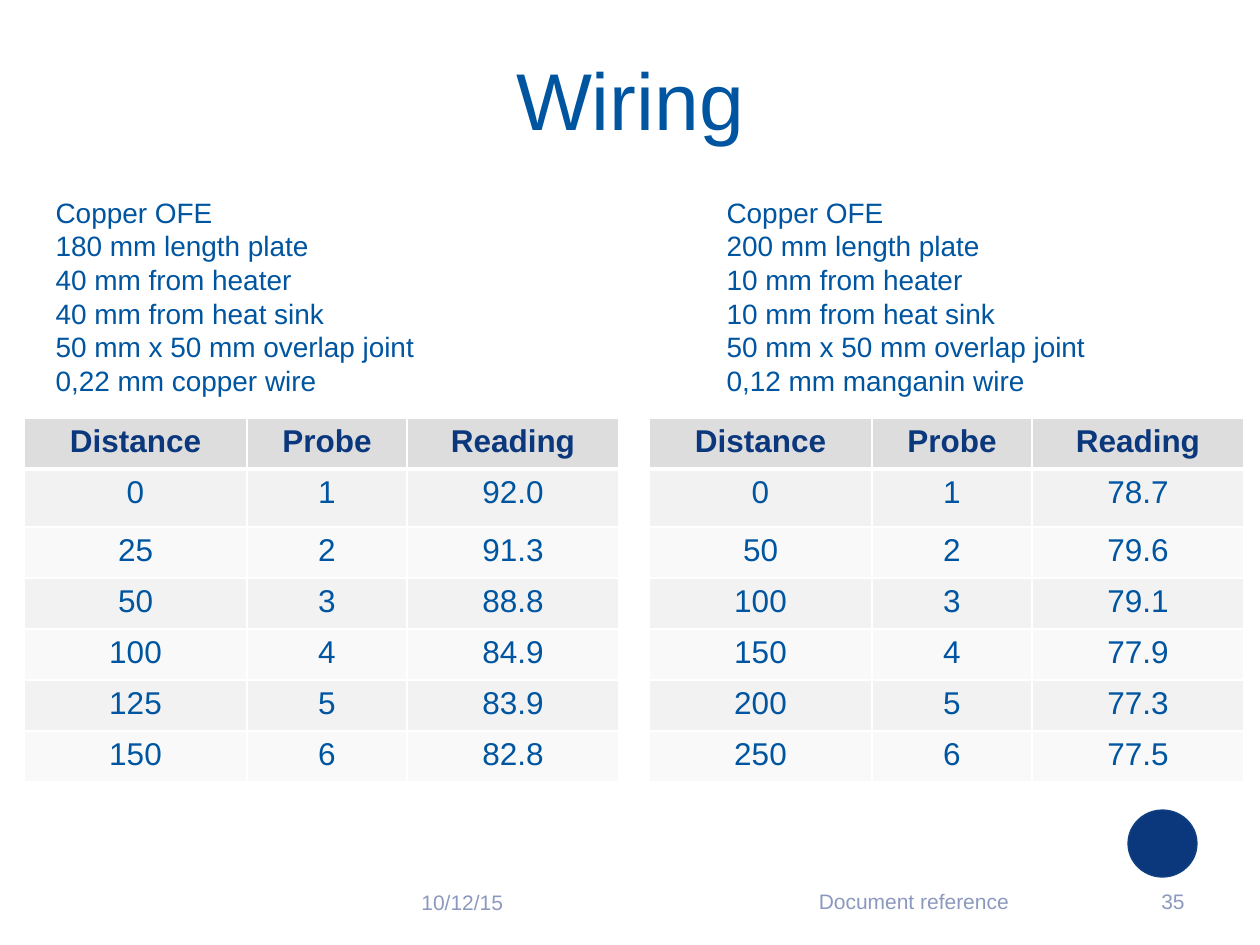
from dataclasses import dataclass

from lxml import etree
from pptx import Presentation
from pptx import util as u
from pptx.dml.color import RGBColor
from pptx.enum import shapes, text
from pptx.oxml.ns import qn

EMU_PER_PX = 914400 / 126

BLUE = RGBColor(0x00, 0x55, 0xA0)
NAVY = RGBColor(0x0B, 0x38, 0x7C)
NAVY_LINE = RGBColor(0x10, 0x42, 0x82)
MUTED = RGBColor(0x8C, 0x99, 0xBE)
HEAD_FILL = RGBColor(0xDD, 0xDD, 0xDD)
BAND_FILLS = (RGBColor(0xF2, 0xF2, 0xF2), RGBColor(0xF9, 0xF9, 0xF9))
WHITE = RGBColor(0xFF, 0xFF, 0xFF)

LEFT, CENTER, RIGHT = (text.PP_ALIGN.LEFT, text.PP_ALIGN.CENTER,
                       text.PP_ALIGN.RIGHT)
MIDDLE = text.MSO_ANCHOR.MIDDLE

HEADINGS = ("Distance", "Probe", "Reading")
COL_WIDTHS = (223, 160, 212)
ROW_HEIGHTS = (51, 58, 51, 51, 51, 51, 51)


@dataclass
class Setup:
    """One wiring test: its description and its probe readings."""
    list_x: int
    table_x: int
    lines: tuple
    distances: tuple
    readings: tuple


@dataclass
class FooterItem:
    label: str
    box: tuple
    align: text.PP_ALIGN


SETUPS = (
    Setup(43, 24,
          ("Copper OFE", "180 mm length plate", "40 mm from heater",
           "40 mm from heat sink", "50 mm x 50 mm overlap joint",
           "0,22 mm copper wire"),
          (0, 25, 50, 100, 125, 150),
          (92.0, 91.3, 88.8, 84.9, 83.9, 82.8)),
    Setup(714, 649,
          ("Copper OFE", "200 mm length plate", "10 mm from heater",
           "10 mm from heat sink", "50 mm x 50 mm overlap joint",
           "0,12 mm manganin wire"),
          (0, 50, 100, 150, 200, 250),
          (78.7, 79.6, 79.1, 77.9, 77.3, 77.5)),
)

FOOTER = (
    FooterItem("10/12/15", (409, 877, 294, 50), LEFT),
    FooterItem("Document reference", (714, 876, 400, 50), CENTER),
    FooterItem("35", (1128, 876, 69, 50), RIGHT),
)


def px(n: int) -> u.Emu:
    return u.Emu(round(n * EMU_PER_PX))


def set_attrs(target, values: dict) -> None:
    for name, value in values.items():
        setattr(target, name, value)


def place(sp, x: int, y: int, w: int, h: int) -> None:
    set_attrs(sp, {"left": px(x), "top": px(y),
                   "width": px(w), "height": px(h)})


def write(p, words: str, size: int, color: RGBColor, align=LEFT,
          bold: bool = False) -> None:
    r = p.add_run()
    r.text = words
    p.alignment = align
    set_attrs(r.font, {"name": "Arial", "size": u.Pt(size), "bold": bold})
    r.font.color.rgb = color


def add_title(s, words: str) -> None:
    sp = s.shapes.title
    place(sp, 63, 33, 1134, 130)
    inset = u.Inches(0.05)
    set_attrs(sp.text_frame, {
        "vertical_anchor": MIDDLE, "margin_left": inset, "margin_right": inset,
        "margin_top": inset, "margin_bottom": inset})
    write(sp.text_frame.paragraphs[0], words, 46, BLUE, CENTER)


def add_list(sp, setup: Setup) -> None:
    place(sp, setup.list_x, 189, 430, 217)
    tf = sp.text_frame
    set_attrs(tf, {"word_wrap": True, "auto_size": text.MSO_AUTO_SIZE.NONE})
    for i, line in enumerate(setup.lines):
        p = tf.add_paragraph() if i else tf.paragraphs[0]
        pPr = p._p.get_or_add_pPr()
        pPr.set("marL", "0")
        pPr.set("indent", "0")
        etree.SubElement(pPr, qn("a:buNone"))
        p.space_before = u.Pt(0)
        write(p, line, 16, BLUE)


def set_borders(cell, widths: dict) -> None:
    """Draw white borders, widths in points, in schema order."""
    tcPr = cell._tc.get_or_add_tcPr()
    for i, side in enumerate("LRTB"):
        ln = etree.Element(qn(f"a:ln{side}"), w=str(u.Pt(widths.get(side, 1))))
        fill = etree.SubElement(ln, qn("a:solidFill"))
        etree.SubElement(fill, qn("a:srgbClr"), val=str(WHITE))
        tcPr.insert(i, ln)


def add_readings(s, setup: Setup) -> None:
    rows = [HEADINGS]
    for probe, (d, v) in enumerate(zip(setup.distances, setup.readings), 1):
        rows.append((str(d), str(probe), f"{v:.1f}"))
    table = s.shapes.add_table(
        len(rows), len(HEADINGS), px(setup.table_x), px(418),
        px(sum(COL_WIDTHS)), px(sum(ROW_HEIGHTS))).table
    for col, width in zip(table.columns, COL_WIDTHS):
        col.width = px(width)
    for i, (row, height) in enumerate(zip(rows, ROW_HEIGHTS)):
        table.rows[i].height = px(height)
        head = i == 0
        for j, words in enumerate(row):
            cell = table.cell(i, j)
            cell.fill.solid()
            cell.fill.fore_color.rgb = (HEAD_FILL if head
                                        else BAND_FILLS[(i - 1) % 2])
            # A thick rule separates the headings from the readings
            set_borders(cell, {0: {"B": 3}, 1: {"T": 3}}.get(i, {}))
            write(cell.text_frame.paragraphs[0], words, 18,
                  NAVY if head else BLUE, CENTER, head)


def add_footer(s, item: FooterItem) -> None:
    sp = s.shapes.add_textbox(*map(px, item.box))
    tf = sp.text_frame
    set_attrs(tf, {"word_wrap": True, "vertical_anchor": MIDDLE})
    write(tf.paragraphs[0], item.label, 12, MUTED, item.align)


def add_disc(s) -> None:
    sp = s.shapes.add_shape(shapes.MSO_SHAPE.OVAL,
                            *map(px, (1128, 810, 69, 67)))
    sp.shadow.inherit = False
    sp.fill.solid()
    sp.fill.fore_color.rgb = NAVY
    sp.line.color.rgb = NAVY_LINE
    sp.line.width = u.Pt(0.75)


def main() -> None:
    prs = Presentation()
    set_attrs(prs, {"slide_width": px(1260), "slide_height": px(945)})
    s = prs.slides.add_slide(prs.slide_layouts[3])  # title and two bodies

    add_title(s, "Wiring")

    # Footer line
    for item in FOOTER:
        add_footer(s, item)

    # Two setups side by side
    for idx, setup in enumerate(SETUPS, 1):
        add_list(s.placeholders[idx], setup)
        add_readings(s, setup)

    add_disc(s)
    prs.save("out.pptx")


if __name__ == "__main__":
    main()
